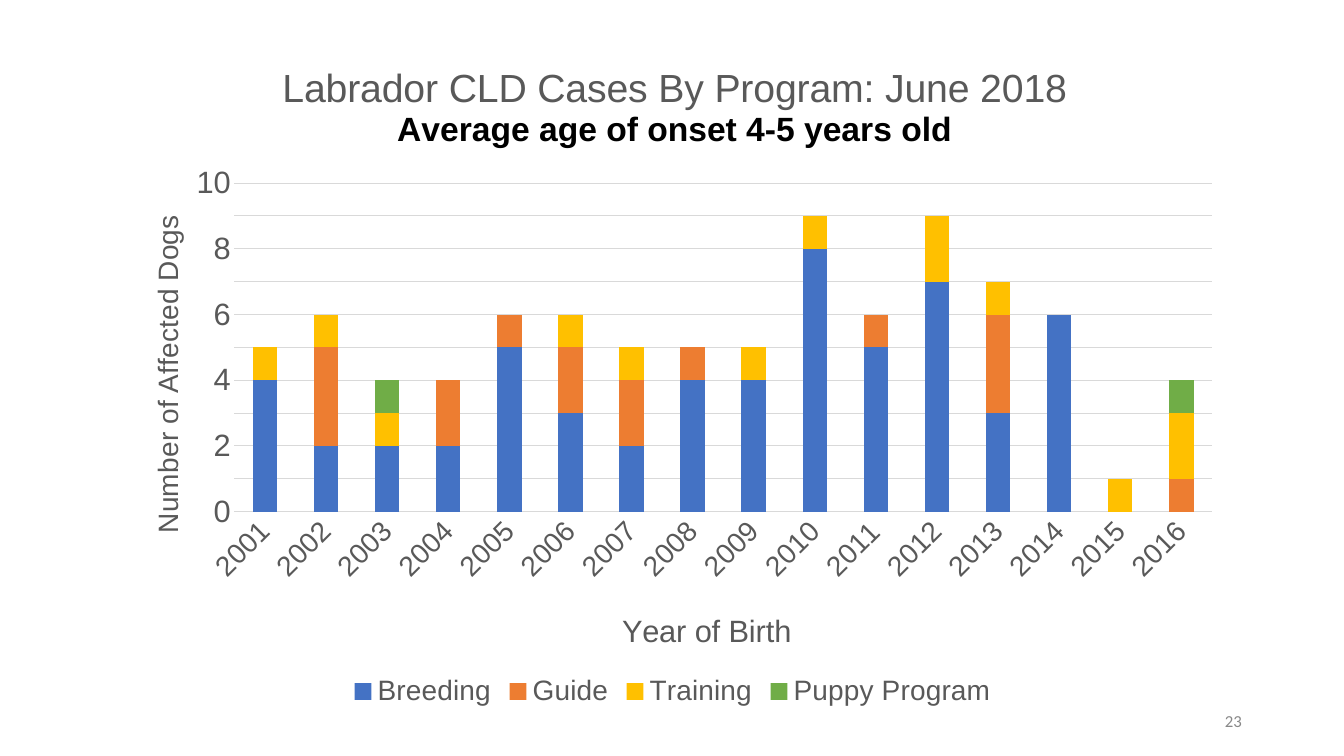
import pptx
import pptx.util
import pptx.chart.data
import pptx.dml.color
import pptx.enum.chart
import pptx.enum.text
import pptx.oxml
import pptx.oxml.ns

RGB = pptx.dml.color.RGBColor
ENUM = pptx.enum.chart
GREY = RGB(0x59, 0x59, 0x59)
PALE = RGB(0xD9, 0xD9, 0xD9)
DIM = RGB(0x88, 0x88, 0x88)
BLACK = RGB(0, 0, 0)
BLUE = RGB(0x44, 0x72, 0xC4)
ORANGE = RGB(0xED, 0x7D, 0x31)
GOLD = RGB(0xFF, 0xC0, 0x00)
GREEN = RGB(0x70, 0xAD, 0x47)

WIDE = pptx.util.Inches(13.33)
HIGH = pptx.util.Inches(7.5)
YEARS = [str(year) for year in range(2001, 2017)]
CASES = [
    ("Breeding", BLUE, "4 2 2 2 5 3 2 4 4 8 5 7 3 6 - -"),
    ("Guide", ORANGE, "- 3 - 2 1 2 2 1 - - 1 - 3 - - 1"),
    ("Training", GOLD, "1 1 1 - - 1 1 - 1 1 - 2 1 - 1 2"),
    ("Puppy Program", GREEN, "- - 1 - - - - - - - - - - - - 1"),
]


def apply(item, style):
    for name, value in style.items():
        setattr(item, name, value)


def set_font(font, size, color=GREY, bold=False, name="Arial"):
    apply(font, {"size": pptx.util.Pt(size), "bold": bold, "name": name})
    font.color.rgb = color


def set_line(line, color):
    line.color.rgb = color
    line.width = pptx.util.Pt(0.75)


def share(left, top, wide, high):
    return WIDE * left // 1000, HIGH * top // 1000, WIDE * wide // 1000, HIGH * high // 1000


def place(node, inner=False, **parts):
    for old in node.findall(pptx.oxml.ns.qn("c:layout")):
        node.remove(old)
    rows = '<c:layoutTarget val="inner"/>' if inner else ""
    rows += "".join(f'<c:{key}Mode val="edge"/>' for key in "xy")
    rows += "".join(f'<c:{key} val="{value}"/>' for key, value in parts.items())
    layout = pptx.oxml.parse_xml(
        f'<c:layout {pptx.oxml.ns.nsdecls("c")}><c:manualLayout>{rows}</c:manualLayout></c:layout>')
    text = node.find(pptx.oxml.ns.qn("c:tx"))
    if text is None:
        node.insert(0, layout)
    else:
        text.addnext(layout)


def add_title(owner, lines, x, y):
    title = owner.chart_title if hasattr(owner, "chart_title") else owner.axis_title
    frame = title.text_frame
    for index, (text, style) in enumerate(lines):
        para = frame.add_paragraph() if index else frame.paragraphs[0]
        run = para.add_run()
        run.text = text
        set_font(run.font, **style)
    place(title._element, x=x, y=y)


def set_axis(axis, size, title, style):
    apply(axis, {"major_tick_mark": ENUM.XL_TICK_MARK.NONE,
                 "minor_tick_mark": ENUM.XL_TICK_MARK.NONE, **style})
    set_font(axis.tick_labels.font, size)
    add_title(axis, *title)


def add_cases(slide):
    data = pptx.chart.data.CategoryChartData()
    data.categories = YEARS
    for name, _, marks in CASES:
        data.add_series(name, [None if mark == "-" else int(mark) for mark in marks.split()])
    frame = slide.shapes.add_chart(
        ENUM.XL_CHART_TYPE.COLUMN_STACKED, *share(82.5, 56, 836, 887), data)
    chart = frame.chart
    set_font(chart.font, 10, BLACK)
    add_title(chart, [("Labrador CLD Cases By Program: June 2018", {"size": 28}),
                      ("Average age of onset 4-5 years old",
                       {"size": 24, "color": BLACK, "bold": True})], 0.15, 0.03)
    place(chart._chartSpace.chart.plotArea, True, x=0.11, y=0.21, w=0.87, h=0.49)

    plot = chart.plots[0]
    apply(plot, {"gap_width": 150, "overlap": 100, "vary_by_categories": False})
    for series, (_, color, _) in zip(plot.series, CASES):
        series.format.fill.solid()
        series.format.fill.fore_color.rgb = color

    years, count = chart.category_axis, chart.value_axis
    set_axis(years, 20, ([("Year of Birth", {"size": 22})], 0.45, 0.84), {})
    years.tick_labels._element.find(pptx.oxml.ns.qn("c:txPr")).bodyPr.set("rot", "-2700000")
    set_line(years.format.line, PALE)
    set_axis(count, 22, ([("Number of Affected Dogs", {"size": 20})], 0.03, 0.25),
             {"minimum_scale": 0, "maximum_scale": 10, "major_unit": 1,
              "has_major_gridlines": True})
    count.format.line.fill.background()
    set_line(count.major_gridlines.format.line, PALE)

    chart.has_legend = True
    apply(chart.legend, {"position": ENUM.XL_LEGEND_POSITION.BOTTOM, "include_in_layout": False})
    set_font(chart.legend.font, 20)


def add_page(slide, text):
    frame = slide.shapes.add_textbox(*share(706.5, 926.5, 225, 53.5)).text_frame
    apply(frame, {"word_wrap": True, "vertical_anchor": pptx.enum.text.MSO_ANCHOR.MIDDLE})
    para = frame.paragraphs[0]
    para.alignment = pptx.enum.text.PP_ALIGN.RIGHT
    run = para.add_run()
    run.text = text
    set_font(run.font, 12, DIM, name="Calibri")


def main():
    deck = pptx.Presentation()
    apply(deck, {"slide_width": WIDE, "slide_height": HIGH})
    slide = deck.slides.add_slide(deck.slide_layouts[6])
    add_cases(slide)
    add_page(slide, "23")
    deck.save("out.pptx")


if __name__ == "__main__":
    main()
